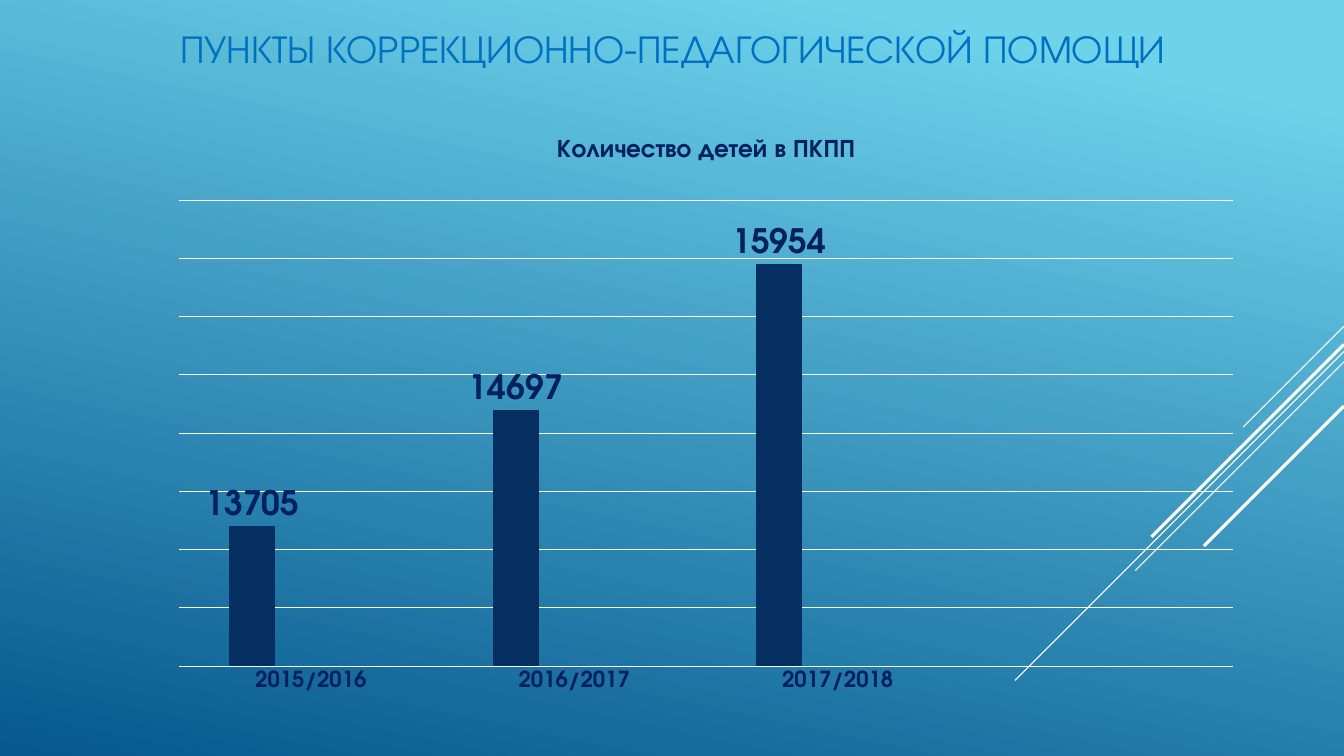
from lxml.etree import SubElement
from pptx import Presentation
from pptx.chart.data import CategoryChartData as ChartData
from pptx.dml.color import RGBColor as Rgb
from pptx.enum.chart import XL_CHART_TYPE as ChartType
from pptx.enum.chart import XL_LABEL_POSITION as LabelPosition
from pptx.enum.chart import XL_TICK_MARK as Tick
from pptx.enum.shapes import MSO_CONNECTOR as Connector
from pptx.enum.text import MSO_ANCHOR as Anchor
from pptx.enum.text import PP_ALIGN as Align
from pptx.oxml import parse_xml
from pptx.oxml.ns import nsdecls, qn
from pptx.util import Pt

COLOURS = {
    "sky": "6ED2EB", "deep": "06588E", "line": "FFFFFF", "title": "0070C0",
    "text": "002060", "first": "052F61", "second": "A50E82", "third": "14967C",
}
WIDTH, HEIGHT = 960, 540


class ReportSlide:
    """Holds the style and the current slide, and adds its elements."""

    def __init__(self, deck, face):
        self.face = face
        self.slide = deck.slides.add_slide(deck.slide_layouts[5])

    def colour(self, name):
        return Rgb.from_string(COLOURS[name])

    def apply(self, target, values):
        for key, value in values.items():
            setattr(target, key, value)

    def style_font(self, font, size, colour, bold):
        self.apply(font, {"name": self.face, "size": Pt(size), "bold": bold})
        font.color.rgb = self.colour(colour)

    def style_line(self, line, weight=0.75):
        line.color.rgb = self.colour("line")
        line.width = Pt(weight)

    def background(self, stops, angle):
        fill = self.slide.background.fill
        fill.gradient()
        fill.gradient_angle = angle
        for stop, (position, name) in zip(fill.gradient_stops, stops):
            stop.position = position
            stop.color.rgb = self.colour(name)

    def ray(self, top, reach, weight):
        ray = self.slide.shapes.add_connector(
            Connector.STRAIGHT, Pt(WIDTH), Pt(top), Pt(WIDTH - reach), Pt(top + reach))
        self.style_line(ray.line, weight)
        SubElement(ray._element.spPr, qn("a:effectLst"))

    def title(self, heading, left, top, width, height):
        title = self.slide.shapes.title
        self.apply(title, {"left": Pt(left), "top": Pt(top),
                           "width": Pt(width), "height": Pt(height)})
        self.apply(title.text_frame, {"text": heading, "word_wrap": True,
                                      "vertical_anchor": Anchor.MIDDLE})
        paragraph = title.text_frame.paragraphs[0]
        paragraph.alignment = Align.CENTER
        self.style_font(paragraph.runs[0].font, 28, "title", False)

    def place(self, owner, values, inner=False):
        """Give a chart part a manual layout as fractions of the chart."""
        old = owner.find(qn("c:layout"))
        if old is not None:
            owner.remove(old)
        target = '<c:layoutTarget val="inner"/>' if inner else ""
        modes = "".join(f'<c:{key}Mode val="edge"/>' for key in "xy")
        parts = "".join(f'<c:{key} val="{value}"/>' for key, value in values.items())
        layout = parse_xml(f'<c:layout {nsdecls("c")}><c:manualLayout>'
                           f'{target}{modes}{parts}</c:manualLayout></c:layout>')
        owner.insert(0 if inner else 1, layout)

    def column_chart(self, heading, years, counts, left, top, width, height):
        data = ChartData()
        data.categories = years
        for name, values in counts.items():
            data.add_series(name, values)
        chart = self.slide.shapes.add_chart(
            ChartType.COLUMN_CLUSTERED, Pt(left), Pt(top), Pt(width), Pt(height), data).chart
        self.style_font(chart.font, 15.8, "text", True)
        self.apply(chart, {"has_legend": False, "has_title": True})
        chart.chart_title.text_frame.text = heading
        caption = chart.chart_title.text_frame.paragraphs[0].runs[0]
        self.style_font(caption.font, 18, "text", True)
        chart.chart_title.include_in_layout = False
        self.place(chart.chart_title._element, {"x": 0.36, "y": 0.04})
        self.place(chart._chartSpace.chart.plotArea,
                   {"x": 0.02, "y": 0.156, "w": 0.96, "h": 0.78}, inner=True)

        plot = chart.plots[0]
        self.apply(plot, {"gap_width": 219, "overlap": -27, "vary_by_categories": False})
        for series, name in zip(plot.series, ("first", "second", "third")):
            series.format.fill.solid()
            series.format.fill.fore_color.rgb = self.colour(name)
        labels = plot.series[0].data_labels
        self.apply(labels, {"show_value": True, "position": LabelPosition.OUTSIDE_END})
        self.style_font(labels.font, 24, "text", True)

        year_axis, count_axis = chart.category_axis, chart.value_axis
        self.apply(year_axis, {"major_tick_mark": Tick.NONE, "minor_tick_mark": Tick.NONE})
        self.style_font(year_axis.tick_labels.font, 15.8, "text", True)
        self.style_line(year_axis.format.line)
        self.apply(count_axis, {"visible": False, "has_major_gridlines": True,
                                "minimum_scale": 12500, "maximum_scale": 16500,
                                "major_unit": 500})
        self.style_line(count_axis.major_gridlines.format.line)


def main():
    deck = Presentation()
    deck.slide_width, deck.slide_height = Pt(WIDTH), Pt(HEIGHT)
    report = ReportSlide(deck, "TeX Gyre Adventor")
    report.background([(0.1, "sky"), (1, "deep")], 258)
    for top, reach, weight in [(233, 72, 0.75), (251, 235, 0.75), (258.5, 149, 0.75),
                               (246, 137.5, 2.25), (290, 100, 2.25)]:
        report.ray(top, reach, weight)
    report.title("ПУНКТЫ КОРРЕКЦИОННО-ПЕДАГОГИЧЕСКОЙ ПОМОЩИ", 11.5, 10, 938, 48)
    unfilled = [None] * 4
    report.column_chart(
        "Количество детей в ПКПП",
        ["2015/2016", "2016/2017", "2017/2018", ""],
        {"Series 1": [13705, 14697, 15954, None],
         "Series 2": unfilled, "Series 3": unfilled},
        112.3, 76.3, 784, 427)
    deck.save("out.pptx")


if __name__ == "__main__":
    main()
